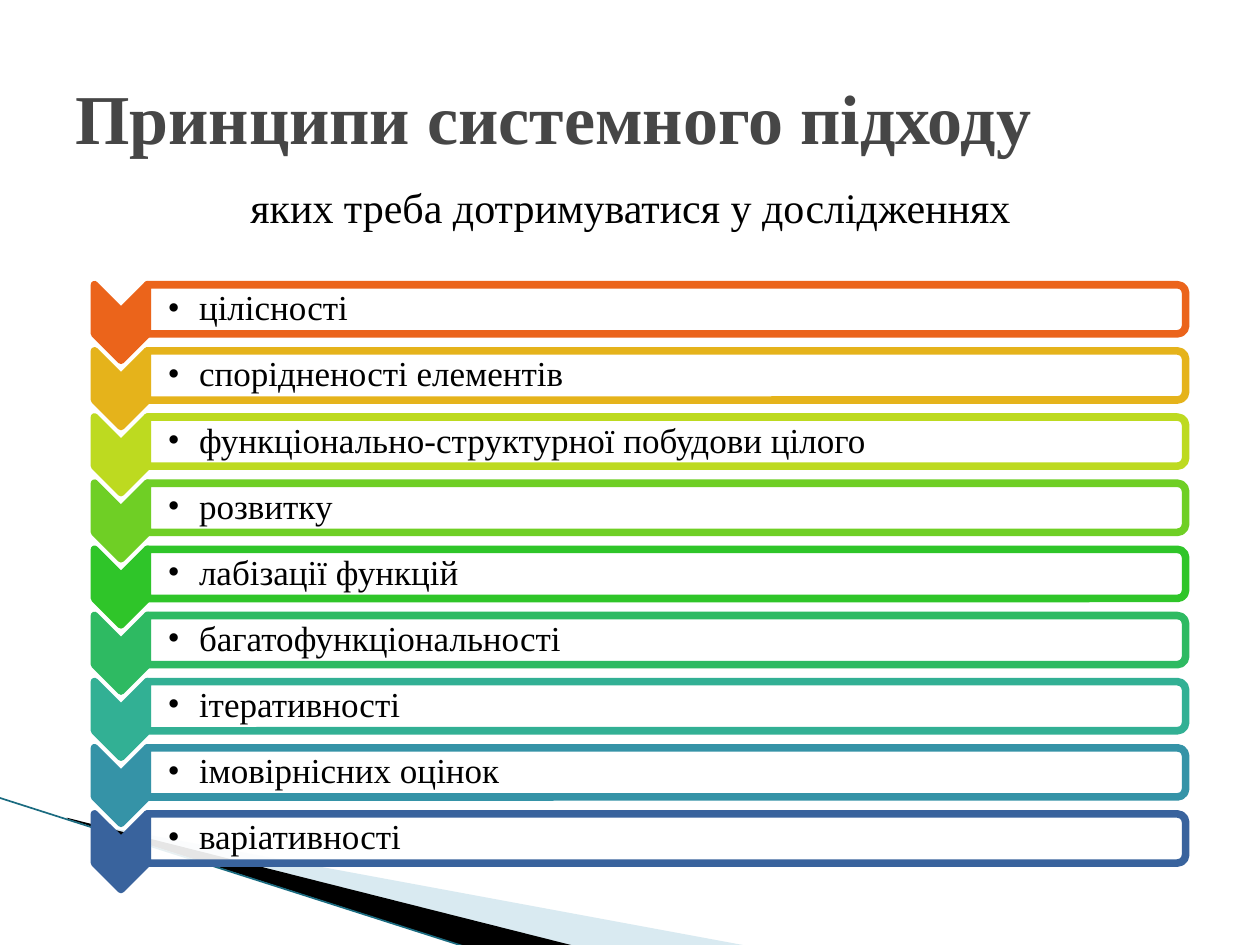
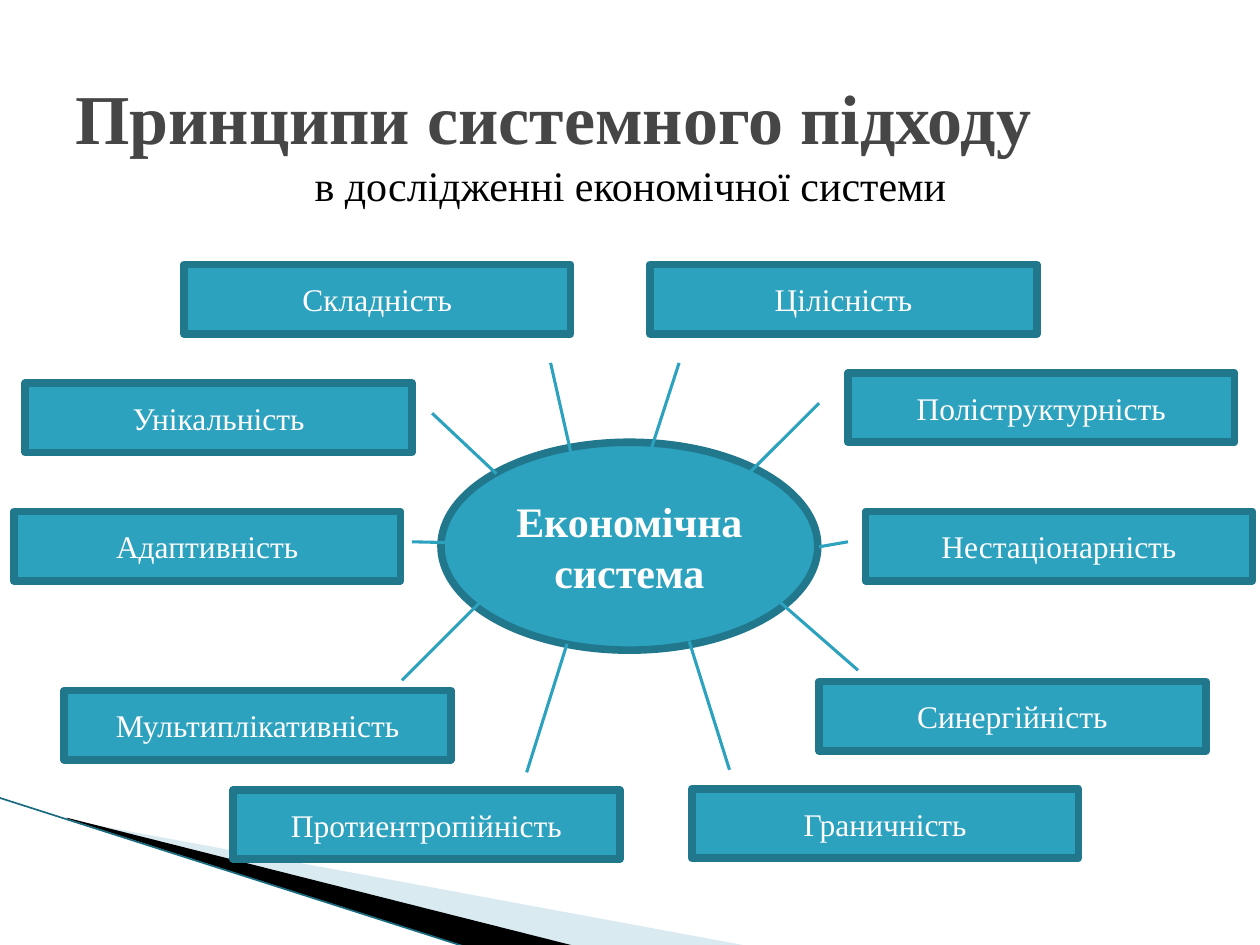
from lxml.etree import SubElement
from pptx import Presentation
from pptx.dml.color import RGBColor
from pptx.enum.shapes import MSO_CONNECTOR, MSO_SHAPE
from pptx.enum.text import MSO_ANCHOR, PP_ALIGN
from pptx.oxml.ns import qn
from pptx.util import Inches, Pt

FONT = "Times New Roman"
HUES = {
    "title": "464646", "ink": "000000", "paper": "FFFFFF",
    "pale": "A0CBDC", "edge": "1A6B80", "teal": "2DA2BF", "deep": "21788D",
}
THICK = 4.33
TITLE = "Принципи системного підходу"
STEPS = [
    ("цілісності", "EB641B"),
    ("спорідненості елементів", "E5B31B"),
    ("функціонально-структурної побудови цілого", "BDDA20"),
    ("розвитку", "6FCF25"),
    ("лабізації функцій", "2FC529"),
    ("багатофункціональності", "2EBA62"),
    ("ітеративності", "32B094"),
    ("імовірнісних оцінок", "3593A7"),
    ("варіативності", "39639D"),
]
# label, left and top of its box, then the two ends of its spoke
NODES = [
    ("Поліструктурність", (6.73, 2.96), (5.87, 3.83), (6.5, 3.2)),
    ("Нестаціонарність", (6.87, 4.06), (6.5, 4.34), (6.73, 4.3)),
    ("Синергійність", (6.5, 5.41), (6.18, 4.77), (6.81, 5.32)),
    ("Граничність", (5.49, 6.26), (5.47, 5.09), (5.79, 6.11)),
    ("Протиентропійність", (1.85, 6.27), (4.5, 5.11), (4.18, 6.13)),
    ("Мультиплікативність", (0.51, 5.48), (3.82, 4.77), (3.19, 5.4)),
    ("Адаптивність", (0.11, 4.06), (3.71, 4.31), (3.27, 4.3)),
    ("Унікальність", (0.2, 3.04), (3.94, 3.76), (3.43, 3.28)),
    ("Цілісність", (5.16, 2.1), (5.16, 3.59), (5.39, 2.88)),
    ("Складність", (1.46, 2.1), (4.53, 3.59), (4.37, 2.88)),
]


def rgb(hue):
    return RGBColor.from_string(hue)


def paint(shape, fill, line=None, alpha=None):
    shape.shadow.inherit = False
    shape.fill.solid()
    shape.fill.fore_color.rgb = rgb(fill)
    if alpha:
        tone = shape.fill._xPr.find(qn("a:solidFill"))[0]
        SubElement(tone, qn("a:alpha"), val=str(alpha * 1000))
    if line:
        shape.line.color.rgb = rgb(line)
        shape.line.width = Pt(THICK)
    else:
        shape.line.fill.background()


def write(shape, text, size, hue, bold=False, align=PP_ALIGN.CENTER,
          anchor=MSO_ANCHOR.MIDDLE):
    """Put one run of text in a shape and return its paragraph."""
    frame = shape.text_frame
    frame.word_wrap = True
    frame.vertical_anchor = anchor
    para = frame.paragraphs[0]
    para.alignment = align
    run = para.add_run()
    run.text = text
    font = run.font
    font.name, font.size, font.bold = FONT, Pt(size), bold
    font.color.rgb = rgb(hue)
    return para


def add_text(slide, left, top, width, height):
    return slide.shapes.add_textbox(*map(Inches, (left, top, width, height)))


def add_form(slide, kind, left, top, width, height):
    return slide.shapes.add_shape(
        kind, *map(Inches, (left, top, width, height)))


def add_turned(slide, kind, left, top, width, height):
    """Add a shape turned by 90 degrees that covers the given box."""
    shift = (width - height) / 2
    form = add_form(slide, kind, left + shift, top - shift, height, width)
    form.rotation = 90
    return form


def add_line(slide, start, end, hue, width):
    line = slide.shapes.add_connector(
        MSO_CONNECTOR.STRAIGHT, *map(Inches, (*start, *end)))
    line.line.color.rgb = rgb(hue)
    line.line.width = Pt(width)
    SubElement(line._element.spPr, qn("a:effectLst"))


def add_wedge(slide, points, hue, alpha=None):
    first, *rest = [tuple(map(Inches, point)) for point in points]
    pen = slide.shapes.build_freeform(*first)
    pen.add_line_segments(rest)
    paint(pen.convert_to_shape(), hue, alpha=alpha)


def add_base(deck, note, top):
    """Start a slide with the corner wedges, the title and a subtitle."""
    slide = deck.slides.add_slide(deck.slide_layouts[6])
    add_wedge(slide, [(0.55, 6.51), (5.95, 7.51), (4.56, 7.51), (0.55, 6.5)],
              HUES["pale"], 40)
    add_wedge(slide, [(0.53, 6.49), (4.57, 7.51), (3.72, 7.52), (0.54, 6.5)],
              HUES["ink"])
    add_line(slide, (-0.01, 6.33), (3.71, 7.52), HUES["edge"], 0.95)
    write(add_text(slide, 0.5, 0.3, 9, 1.25), TITLE, 40, HUES["title"],
          bold=True, align=PP_ALIGN.LEFT)
    write(add_text(slide, 0.91, top, 8.19, 0.5), note, 24, HUES["ink"],
          anchor=MSO_ANCHOR.TOP)
    return slide


def add_step(slide, left, top, width, text, hue):
    """Add a chevron and, beside it, a framed bar with a bullet."""
    arm = 0.42
    mark = add_turned(slide, MSO_SHAPE.CHEVRON, left, top, arm, 0.6)
    paint(mark, hue, hue)
    bar = add_turned(slide, MSO_SHAPE.ROUND_2_SAME_RECTANGLE,
                     left + arm, top, width - arm, 0.39)
    paint(bar, HUES["paper"], hue, 90)
    label = add_text(slide, left + arm, top + 0.02, width - arm, 0.35)
    frame = label.text_frame
    frame.margin_left = Inches(0.16)
    frame.margin_top = frame.margin_right = frame.margin_bottom = Inches(0.01)
    para = write(label, text, 20, HUES["ink"], align=PP_ALIGN.LEFT)
    para.line_spacing = 0.9
    props = para._p.get_or_add_pPr()
    props.set("marL", str(Inches(0.25)))
    props.set("indent", str(Inches(-0.25)))
    SubElement(props, qn("a:buFont"), typeface=FONT)
    SubElement(props, qn("a:buChar"), char="•")


def add_steps(slide, left, top, width, pitch):
    for row, (text, hue) in enumerate(STEPS):
        add_step(slide, left, top + row * pitch, width, text, hue)


def add_web(slide, left, top, width, height):
    """Add the hub in the given box, with its nodes and spokes around it."""
    hub = add_form(slide, MSO_SHAPE.OVAL, left, top, width, height)
    paint(hub, HUES["teal"], HUES["deep"])
    write(hub, "Економічна система", 24, HUES["paper"], bold=True)

    def place(point):
        return left + point[0] - 3.5, top + point[1] - 3.51

    for text, spot, _, _ in NODES:
        node = add_form(slide, MSO_SHAPE.RECTANGLE, *place(spot), 3.07, 0.55)
        paint(node, HUES["teal"], HUES["deep"])
        write(node, text, 18, HUES["paper"])
    for _, _, start, end in NODES:
        add_line(slide, place(start), place(end), HUES["teal"], 1.75)


def main():
    deck = Presentation()
    deck.slide_width, deck.slide_height = Inches(10), Inches(7.5)
    first = add_base(deck, "яких треба дотримуватися у дослідженнях", 1.39)
    add_steps(first, 0.75, 2.26, 8.66, 0.525)
    second = add_base(deck, "в дослідженні економічної системи", 1.22)
    add_web(second, 3.5, 3.51, 2.99, 1.65)
    deck.save("out.pptx")


if __name__ == "__main__":
    main()
